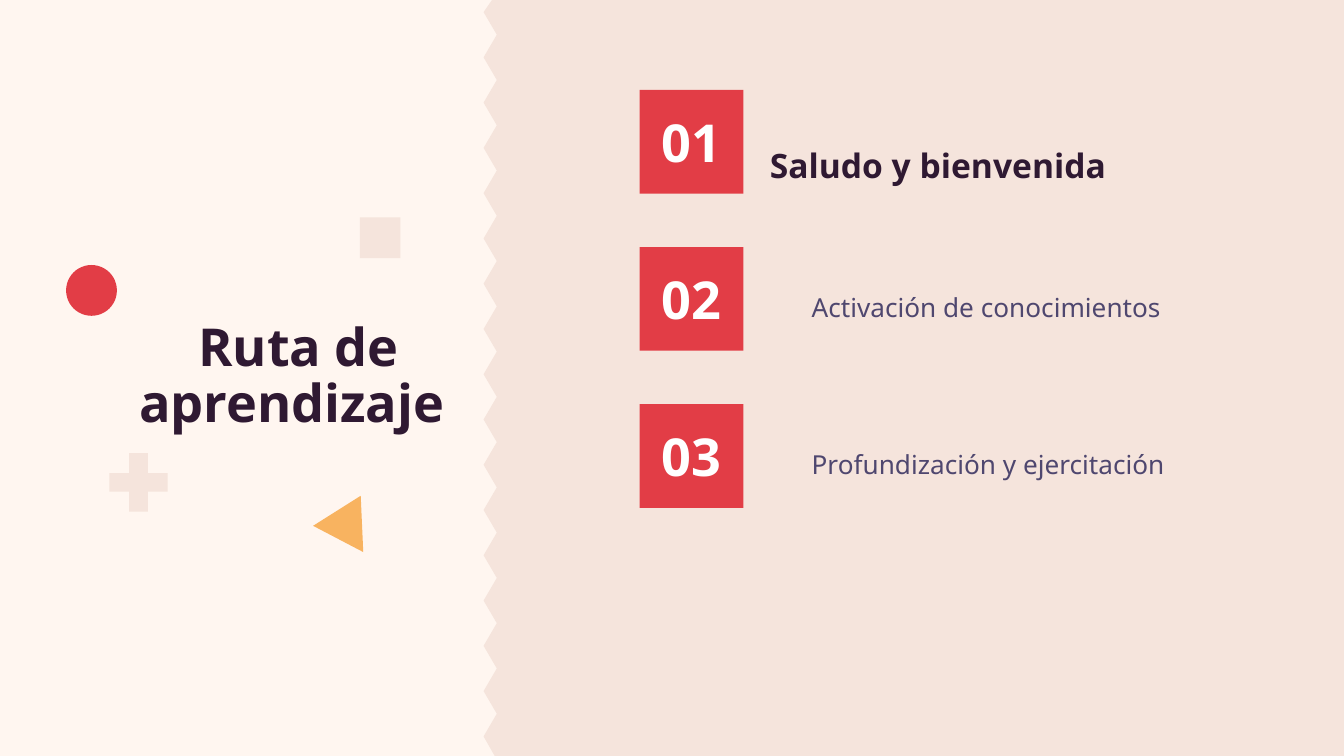
from pptx import Presentation
from pptx.dml.color import RGBColor
from pptx.enum import shapes, text
from pptx.util import Cm, Pt

THEME = {
    "font": "Noto Sans",
    "cream": "FFF6F0", "sand": "F5E4DC", "red": "E23D46", "amber": "F8B360",
    "ink": "2F1932", "violet": "4F476F", "white": "FFFFFF",
    "heading": 28, "lead": 18, "body": 14,
}

# Content
TITLE = "Ruta de aprendizaje "
LEAD = dict(left=14.3, drop=0.79, width=10.01, height=1.17,
            style=dict(size="lead", color="ink", bold=True))
STEP = dict(left=14.71, drop=0.58, width=7.75, height=1.83,
            style=dict(size="body", color="violet", margin=1.27, hanging=-0.89))
AGENDA = [
    ("01", "Saludo y bienvenida", LEAD),
    ("02", "Activación de conocimientos", STEP),
    ("03", "Profundización y ejercitación", STEP),
]
KIND = shapes.MSO_SHAPE
ORNAMENTS = [  # kind, left, top, width, height, colour, rotation, adjustment
    (KIND.OVAL, 1.25, 5.01, 0.96, 0.96, "red", 0, None),
    (KIND.ISOSCELES_TRIANGLE, 6.07, 9.32, 1.07, 0.92, "amber", 27.6, 0.5),
    (KIND.MATH_PLUS, 1.87, 8.37, 1.5, 1.5, "sand", 0, 0.235),
    (KIND.RECTANGLE, 6.8, 4.11, 0.77, 0.77, "sand", 0, None),
]

# Geometry in centimetres
SLIDE_W, SLIDE_H = 25.4, 14.29
BADGE_LEFT, BADGE_TOP, BADGE_SIZE, BADGE_PITCH = 12.09, 1.7, 1.96, 2.97
EDGE_X, EDGE_TOP, EDGE_BOTTOM, TEETH = (9.14, 9.39), 0.23, 13.92, 32


def color(name):
    return RGBColor.from_string(THEME[name])


def box(left, top, width, height):
    return Cm(left), Cm(top), Cm(width), Cm(height)


def write(target, words, size="body", color_name=None, color="ink", bold=False,
          align=text.PP_ALIGN.LEFT, anchor=text.MSO_ANCHOR.TOP,
          spacing=None, margin=None, hanging=0):
    frame = target.text_frame
    frame.word_wrap = True
    frame.auto_size = text.MSO_AUTO_SIZE.NONE
    frame.vertical_anchor = anchor
    frame.margin_left = frame.margin_right = Cm(0.25)
    frame.margin_top = frame.margin_bottom = Cm(0.25)
    paragraph = frame.paragraphs[0]
    paragraph.alignment = align
    if spacing:
        paragraph.line_spacing = spacing
    if margin is not None:
        properties = paragraph._p.get_or_add_pPr()
        properties.set("marL", str(Cm(margin)))
        properties.set("indent", str(Cm(hanging)))
    run = paragraph.add_run()
    run.text = words
    run.font.name = THEME["font"]
    run.font.size = Pt(THEME[size])
    run.font.bold = bold
    run.font.color.rgb = RGBColor.from_string(THEME[color])


def paint(shape, fill):
    shape.shadow.inherit = False
    shape.fill.solid()
    shape.fill.fore_color.rgb = color(fill)
    shape.line.fill.background()
    return shape


def add_panel(slide):
    rise = (EDGE_BOTTOM - EDGE_TOP) / TEETH
    edge = [(EDGE_X[i % 2], EDGE_TOP + i * rise) for i in range(TEETH + 1)]
    outline = edge + [(9.35, SLIDE_H), (SLIDE_W, SLIDE_H), (SLIDE_W, 0)]
    builder = slide.shapes.build_freeform(Cm(9.3), 0)
    builder.add_line_segments([(Cm(x), Cm(y)) for x, y in outline], close=True)
    paint(builder.convert_to_shape(), "sand")


def main():
    deck = Presentation()
    deck.slide_width, deck.slide_height = Cm(SLIDE_W), Cm(SLIDE_H)
    slide = deck.slides.add_slide(deck.slide_layouts[5])
    slide.background.fill.solid()
    slide.background.fill.fore_color.rgb = color("cream")
    heading = dict(size="heading", bold=True, align=text.PP_ALIGN.CENTER,
                   anchor=text.MSO_ANCHOR.MIDDLE)

    # Zigzag panel
    add_panel(slide)

    # Title
    title = slide.shapes.title
    title.left, title.top, title.width, title.height = box(1.78, 5.61, 7.72, 3.07)
    write(title, TITLE, spacing=0.88, **heading)

    # Numbered agenda
    for row, (number, topic, place) in enumerate(AGENDA):
        top = BADGE_TOP + row * BADGE_PITCH
        badge = paint(slide.shapes.add_shape(
            KIND.RECTANGLE, *box(BADGE_LEFT, top, BADGE_SIZE, BADGE_SIZE)), "red")
        write(badge, number, color="white", **heading)
        label = slide.shapes.add_textbox(
            *box(place["left"], top + place["drop"], place["width"], place["height"]))
        write(label, topic, **place["style"])

    # Ornaments
    for kind, left, top, width, height, fill, rotation, adjustment in ORNAMENTS:
        ornament = paint(slide.shapes.add_shape(
            kind, *box(left, top, width, height)), fill)
        ornament.rotation = rotation
        if adjustment is not None:
            ornament.adjustments[0] = adjustment

    deck.save("out.pptx")


if __name__ == "__main__":
    main()
